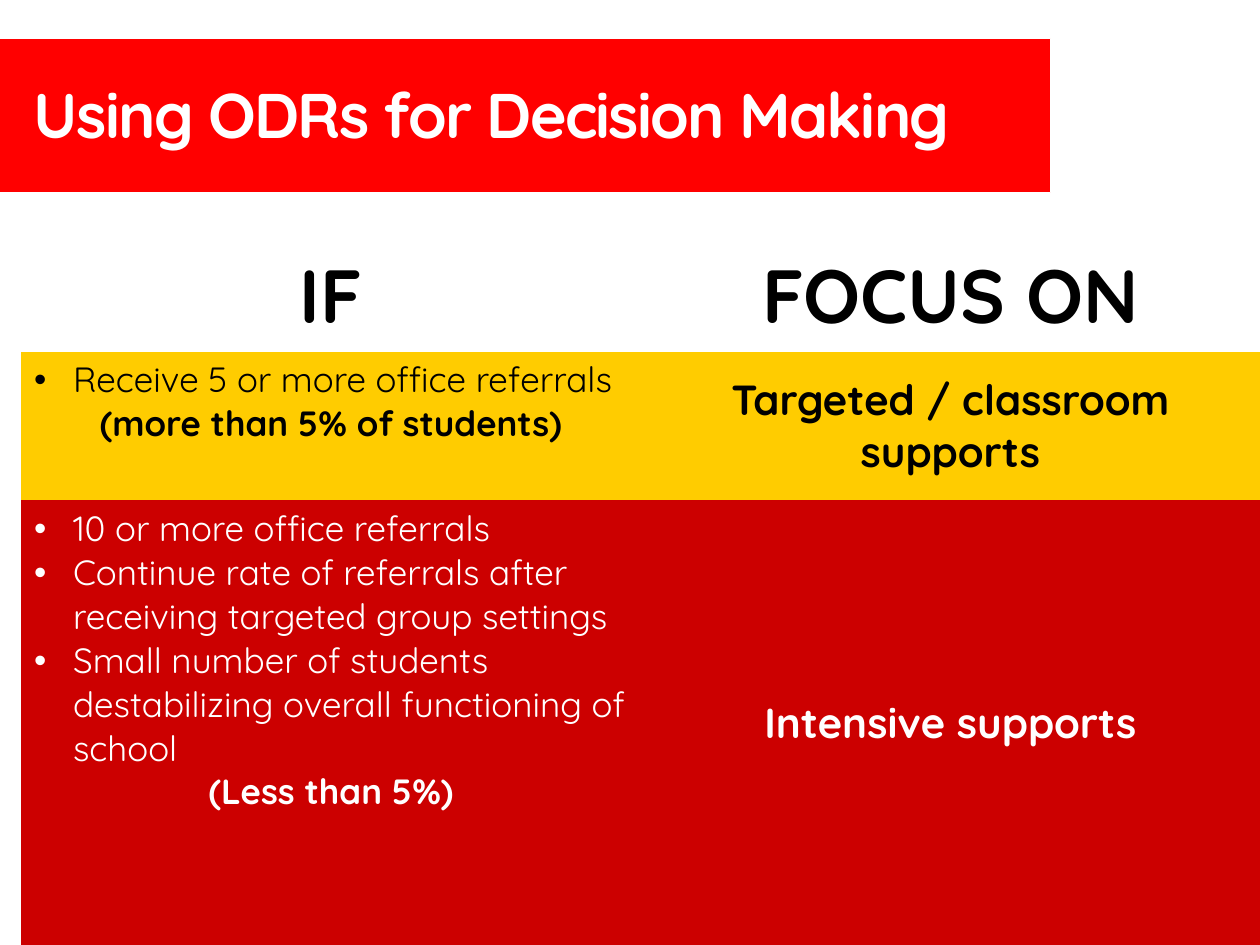
from pptx import Presentation, util as u
from pptx.dml.color import RGBColor
from pptx.enum import shapes, text
from pptx.oxml.ns import qn
from lxml import etree

HUES = {"band": "FF0000", "gold": "FFCC00", "red": "CC0000",
        "white": "FFFFFF", "black": "000000"}
PLAIN = "{2D5ABB26-0587-4C30-8999-92F81FD0307C}"
WIDE, HIGH = 10, 7.5
LEFT, TOP = 0.017, 0.256
ROWS = (0.87, 1.18, 3.53)
MID = text.MSO_ANCHOR.MIDDLE


class Deck:
    font = "Quicksand"

    def __init__(self):
        self.file = Presentation()
        self.file.slide_width = u.Inches(WIDE)
        self.file.slide_height = u.Inches(HIGH)
        self.page = self.file.slides.add_slide(self.file.slide_layouts[6])

    def area(self, x, y, w, h):
        return [u.Inches(n) for n in (x * WIDE, y * HIGH, w * WIDE, h * HIGH)]

    def tint(self, hue):
        return RGBColor.from_string(HUES[hue])

    def style(self, para, size, hue, bold=True):
        for run in para.runs:
            font = run.font
            font.name, font.size, font.bold = self.font, u.Pt(size), bold
            font.color.rgb = self.tint(hue)

    def band(self, *area):
        box = self.page.shapes.add_shape(
            shapes.MSO_SHAPE.RECTANGLE, *self.area(*area))
        box.shadow.inherit = False
        box.fill.solid()
        box.fill.fore_color.rgb = self.tint("band")
        box.line.color.rgb = self.tint("white")
        box.line.width = u.Pt(0.75)

    def title(self, words, *area):
        frame = self.page.shapes.add_textbox(*self.area(*area)).text_frame
        frame.word_wrap = True
        frame.vertical_anchor = MID
        frame.text = words
        para = frame.paragraphs[0]
        self.style(para, 36, "white")
        para.runs[0].font._element.set("spc", "-100")

    def table(self, rows, cols, *area):
        grid = self.page.shapes.add_table(rows, cols, *self.area(*area)).table
        grid.first_row = grid.horz_banding = False
        grid._tbl.tblPr.find(qn("a:tableStyleId")).text = PLAIN
        for row, high in zip(grid.rows, ROWS):
            row.height = u.Inches(high)
        return grid

    def fill(self, cell, hue):
        if hue:
            cell.fill.solid()
            cell.fill.fore_color.rgb = self.tint(hue)
        else:
            cell.fill.background()

    def label(self, cell, words, size, ink, hue=None):
        self.fill(cell, hue)
        cell.text_frame.text = words
        if hue:
            cell.vertical_anchor = MID
        para = cell.text_frame.paragraphs[0]
        para.alignment = text.PP_ALIGN.CENTER
        self.style(para, size, ink)

    def points(self, cell, items, note, ink, hue):
        self.fill(cell, hue)
        cell.text_frame.text = "\n".join([*items, note])
        *paras, last = cell.text_frame.paragraphs
        for para in paras:
            props = para._p.get_or_add_pPr()
            props.set("marL", str(u.Inches(0.31)))
            props.set("indent", str(-u.Inches(0.31)))
            etree.SubElement(props, qn("a:buFont")).set("typeface", "Arial")
            etree.SubElement(props, qn("a:buChar")).set("char", "•")
            self.style(para, 20, ink, False)
        last.alignment = text.PP_ALIGN.CENTER
        self.style(last, 20, ink)


def main():
    deck = Deck()
    deck.band(-0.008, 0.041, 0.842, 0.163)
    deck.title("Using ODRs for Decision Making", LEFT, 0.048, 0.817, 0.144)
    grid = deck.table(3, 2, LEFT, TOP, 1 - LEFT, 1 - TOP)
    for col, head in enumerate(("IF", "FOCUS ON")):
        deck.label(grid.cell(0, col), head, 43, "black")
    levels = [
        (["Receive 5 or more office referrals"],
         "(more than 5% of students)",
         "Targeted / classroom supports", "black", "gold"),
        (["10 or more office referrals",
          "Continue rate of referrals after receiving targeted group settings",
          "Small number of students destabilizing overall functioning of school"],
         "(Less than 5%)", "Intensive supports", "white", "red"),
    ]
    for row, (items, note, focus, ink, hue) in enumerate(levels, 1):
        deck.points(grid.cell(row, 0), items, note, ink, hue)
        deck.label(grid.cell(row, 1), focus, 24, ink, hue)
    deck.file.save("out.pptx")


if __name__ == "__main__":
    main()
